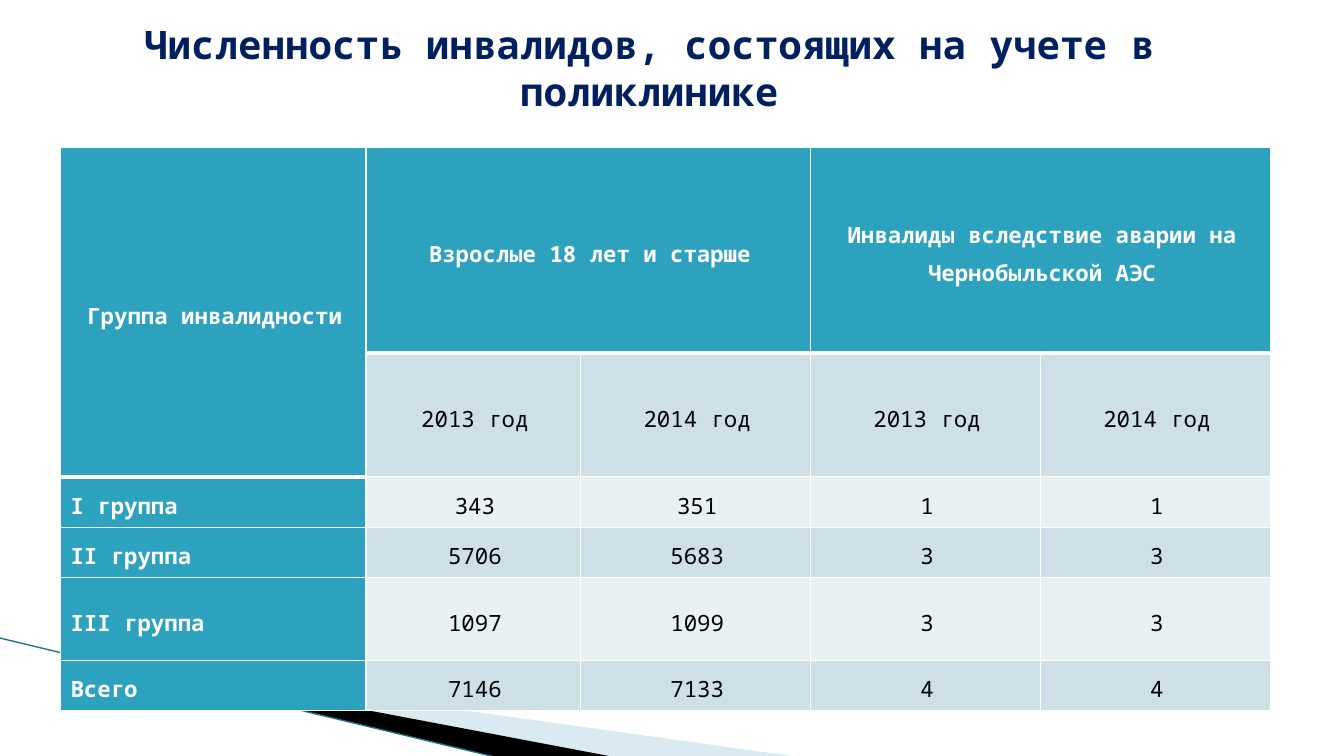
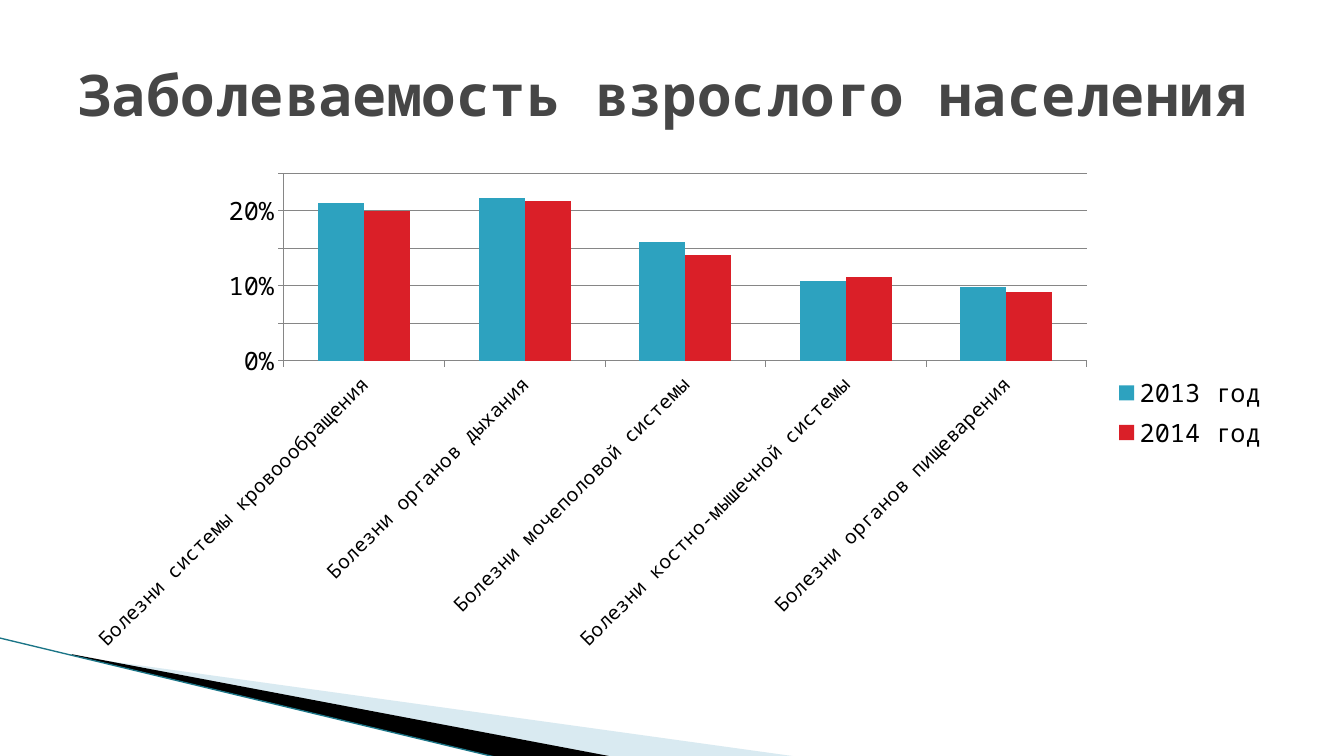
import dataclasses

import pptx
import pptx.chart.data
import pptx.dml.color
import pptx.enum.chart
import pptx.enum.shapes
import pptx.enum.text
import pptx.oxml
import pptx.oxml.ns
import pptx.util

Inches = pptx.util.Inches
Pt = pptx.util.Pt
RGB = pptx.dml.color.RGBColor.from_string
qn = pptx.oxml.ns.qn


@dataclasses.dataclass(frozen=True)
class Theme:
    font: str = "Noto Sans Mono"
    white: str = "FFFFFF"
    black: str = "000000"
    navy: str = "002060"
    gray: str = "464646"
    teal: str = "2DA2BF"
    red: str = "DA1F28"
    band_dark: str = "CDE0E8"
    band_light: str = "E8F0F4"
    wedge: str = "A0CBDC"
    edge: str = "1B7587"
    grid: str = "868686"
    table_title: int = 28
    chart_title: int = 41
    cell: int = 16
    chart: int = 18
    category: int = 14


theme = Theme()


def style(font, size, color, bold=False):
    font.name = theme.font
    font.size = Pt(size)
    font.bold = bold
    font.color.rgb = RGB(color)


def start_slide(title, box, size, color, align):
    slide = deck.slides.add_slide(deck.slide_layouts[6])
    for points, fill, alpha in WEDGES:
        corners = [(Inches(x), Inches(y)) for x, y in points]
        builder = slide.shapes.build_freeform(*corners[0])
        builder.add_line_segments(corners[1:], close=True)
        wedge = builder.convert_to_shape()
        wedge.shadow.inherit = False
        wedge.line.fill.background()
        wedge.fill.solid()
        wedge.fill.fore_color.rgb = RGB(fill)
        if alpha < 100:
            color_node = next(wedge.element.spPr.iter(qn("a:srgbClr")))
            pptx.oxml.ns.qn("a:alpha")
            color_node.append(pptx.oxml.parse_xml(
                f'<a:alpha xmlns:a="{DRAWING}" val="{alpha * 1000}"/>'))
    edge = slide.shapes.add_connector(
        pptx.enum.shapes.MSO_CONNECTOR.STRAIGHT,
        Inches(0), Inches(6.33), Inches(4.95), Inches(7.52))
    edge.line.color.rgb = RGB(theme.edge)
    edge.line.width = Pt(0.95)
    edge.element.spPr.append(pptx.oxml.parse_xml(f'<a:effectLst xmlns:a="{DRAWING}"/>'))
    heading = slide.shapes.add_textbox(*map(Inches, box)).text_frame
    heading.word_wrap = True
    heading.vertical_anchor = pptx.enum.text.MSO_ANCHOR.MIDDLE
    heading.text = title
    heading.paragraphs[0].alignment = align
    style(heading.paragraphs[0].runs[0].font, size, color, True)
    return slide


DRAWING = "http://schemas.openxmlformats.org/drawingml/2006/main"
WEDGES = [
    ([(0.73, 6.51), (7.93, 7.51), (6.08, 7.51), (0.73, 6.5)], theme.wedge, 40),
    ([(0.71, 6.49), (6.09, 7.51), (4.96, 7.52), (0.72, 6.5)], theme.black, 100),
]
LEFT = pptx.enum.text.PP_ALIGN.LEFT
CENTER = pptx.enum.text.PP_ALIGN.CENTER

deck = pptx.Presentation()
deck.slide_width = Inches(13.33)
deck.slide_height = Inches(7.5)

slide = start_slide("Численность инвалидов, состоящих на учете в поликлинике",
                    (0.54, 0.15, 11.8, 1.04), theme.table_title, theme.navy, CENTER)
column_widths = [3.03, 2.13, 2.28, 2.28, 2.28]
row_heights = [2.04, 1.23, 0.5, 0.5, 0.82, 0.5]
disability_rows = [
    ["Группа инвалидности", "Взрослые 18 лет и старше", "",
     "Инвалиды вследствие аварии на Чернобыльской АЭС", ""],
    ["", "2013 год", "2014 год", "2013 год", "2014 год"],
    ["I группа", "343", "351", "1", "1"],
    ["II группа", "5706", "5683", "3", "3"],
    ["III группа", "1097", "1099", "3", "3"],
    ["Всего", "7146", "7133", "4", "4"],
]
disability = slide.shapes.add_table(
    len(row_heights), len(column_widths), Inches(0.6), Inches(1.46),
    Inches(sum(column_widths)), Inches(sum(row_heights))).table
for column, width in zip(disability.columns, column_widths):
    column.width = Inches(width)
for row, height in zip(disability.rows, row_heights):
    row.height = Inches(height)
for first, last in [((0, 0), (1, 0)), ((0, 1), (0, 2)), ((0, 3), (0, 4))]:
    disability.cell(*first).merge(disability.cell(*last))

for r, texts in enumerate(disability_rows):
    for c, text in enumerate(texts):
        cell = disability.cell(r, c)
        is_header = r == 0 or c == 0
        thick_bottom = r == 0 or (r, c) == (1, 0)
        properties = cell._tc.get_or_add_tcPr()
        for side in "LRTB":
            width = Pt(3 if side == "B" and thick_bottom else 1)
            properties.append(pptx.oxml.parse_xml(
                f'<a:ln{side} xmlns:a="{DRAWING}" w="{width}"><a:solidFill>'
                f'<a:srgbClr val="{theme.white}"/></a:solidFill></a:ln{side}>'))
        band = theme.band_dark if r % 2 else theme.band_light
        cell.fill.solid()
        cell.fill.fore_color.rgb = RGB(theme.teal if is_header else band)
        cell.vertical_anchor = pptx.enum.text.MSO_ANCHOR.MIDDLE
        cell.margin_left = Inches(0.1)
        cell.margin_right = Inches(0.07)
        cell.margin_top = cell.margin_bottom = 0
        if text:
            cell.text_frame.text = text
            paragraph = cell.text_frame.paragraphs[0]
            paragraph.alignment = LEFT if c == 0 and r > 1 else CENTER
            paragraph.line_spacing = 1.25
            style(paragraph.runs[0].font, theme.cell,
                  theme.white if is_header else theme.black, is_header)

slide = start_slide("Заболеваемость взрослого населения",
                    (0.67, 0.3, 12, 1.25), theme.chart_title, theme.gray, LEFT)
morbidity = pptx.chart.data.CategoryChartData(number_format="0.00%")
morbidity.categories = [
    "Болезни системы кровоообращения",
    "Болезни органов дыхания",
    "Болезни мочеполовой системы",
    "Болезни костно-мышечной системы",
    "Болезни органов пищеварения",
]
morbidity.add_series("2013 год", [0.21, 0.217, 0.158, 0.106, 0.098])
morbidity.add_series("2014 год", [0.2, 0.213, 0.141, 0.111, 0.091])
chart = slide.shapes.add_chart(
    pptx.enum.chart.XL_CHART_TYPE.COLUMN_CLUSTERED,
    Inches(0.67), Inches(1.62), Inches(12), Inches(4.95), morbidity).chart
style(chart.font, theme.chart, theme.black)
chart.has_title = False
chart.has_legend = True
chart.legend.position = pptx.enum.chart.XL_LEGEND_POSITION.RIGHT
chart.legend.include_in_layout = False
style(chart.legend.font, theme.chart, theme.black)

columns = chart.plots[0]
columns.vary_by_categories = False
columns.gap_width = 150
columns.overlap = 0
for series, color in zip(columns.series, [theme.teal, theme.red]):
    series.format.fill.solid()
    series.format.fill.fore_color.rgb = RGB(color)

shares = chart.value_axis
shares.minimum_scale = 0
shares.maximum_scale = 0.25
shares.major_unit = 0.05
shares.has_major_gridlines = True
shares.major_gridlines.format.line.color.rgb = RGB(theme.grid)
shares.tick_labels.number_format = "0%"
shares.tick_labels.number_format_is_linked = False
diseases = chart.category_axis
for axis, size in [(shares, theme.chart), (diseases, theme.category)]:
    axis.major_tick_mark = pptx.enum.chart.XL_TICK_MARK.OUTSIDE
    axis.format.line.color.rgb = RGB(theme.grid)
    style(axis.tick_labels.font, size, theme.black)
disease_axis = next(chart.element.iter(qn("c:catAx")))
next(disease_axis.iter(qn("a:bodyPr"))).set("rot", str(-45 * 60000))

deck.save("out.pptx")
